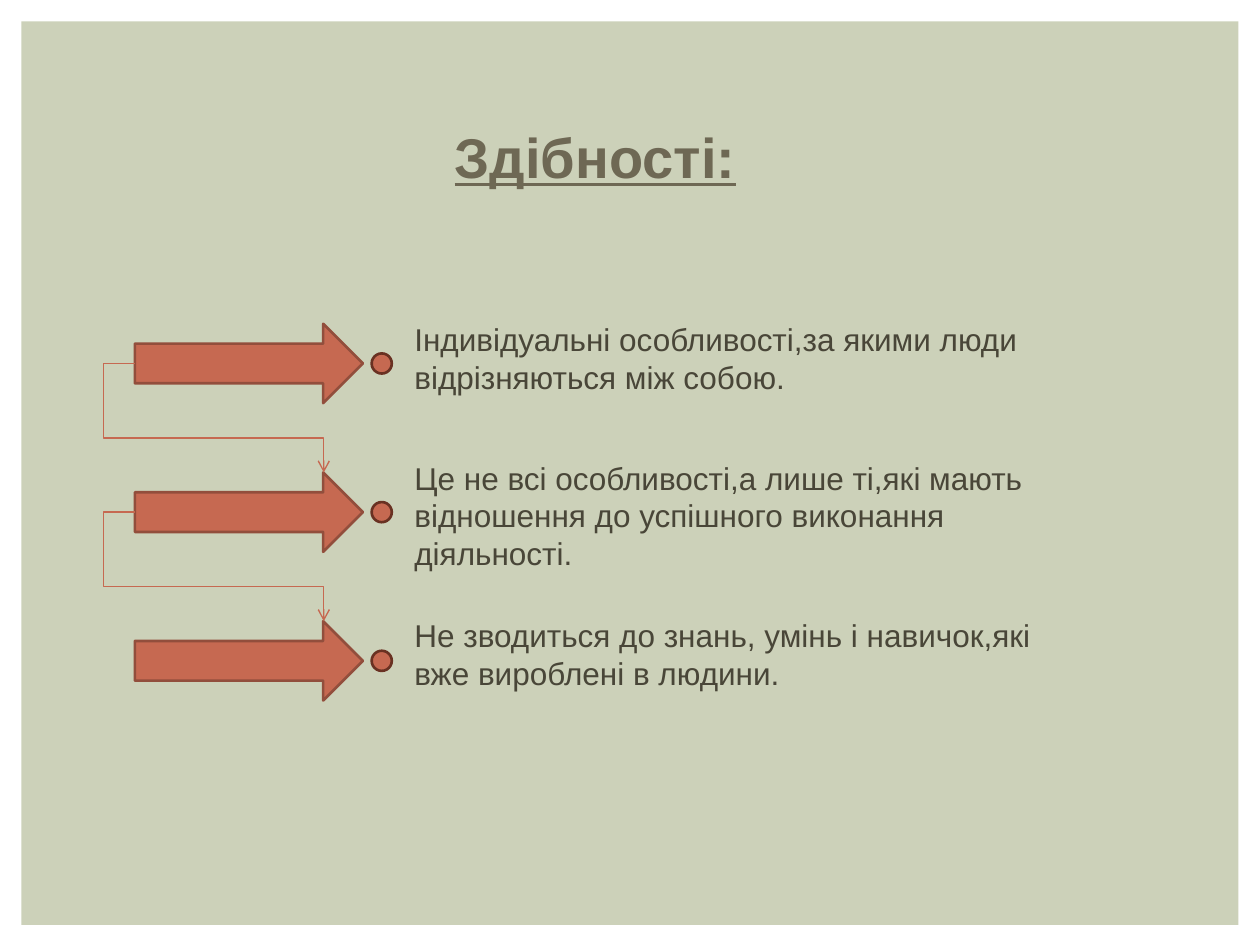
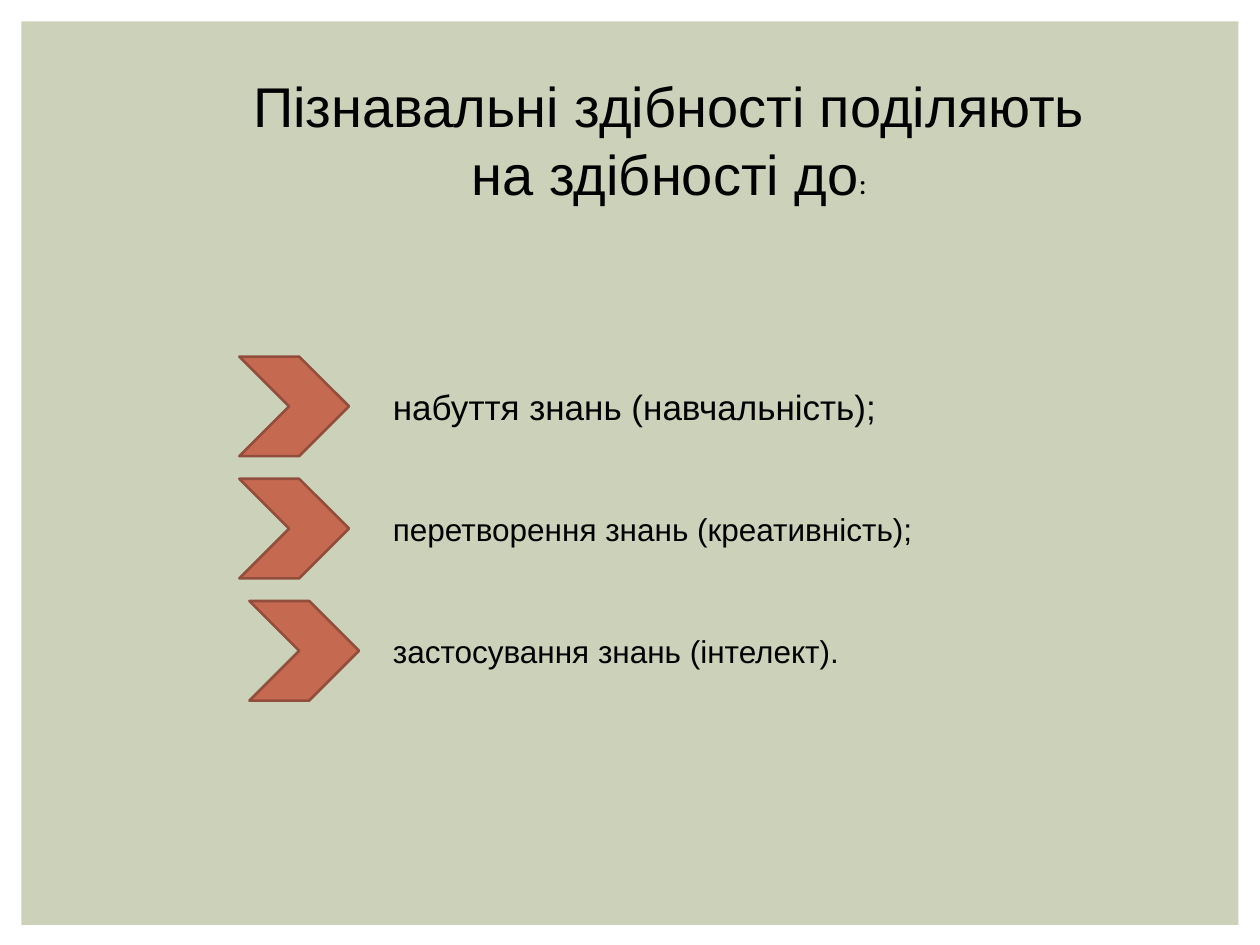
from lxml import etree
from pptx import Presentation
from pptx.dml.color import RGBColor
from pptx.enum.shapes import MSO_CONNECTOR, MSO_SHAPE as Shape
from pptx.enum.text import MSO_ANCHOR as Anchor, MSO_AUTO_SIZE, PP_ALIGN as Align
from pptx.oxml.ns import qn
from pptx.util import Inches, Pt

SAGE, CLAY = "CCD1B9", "C66951"
CLAY_EDGE, DOT_EDGE = "924E3C", "693122"
TITLE_BROWN, TEXT_BROWN, BLACK = "6E6854", "494638", "000000"


def add_figure(slide, kind, bounds, fill, edge=None):
    figure = slide.shapes.add_shape(kind, *map(Inches, bounds))
    figure.shadow.inherit = False
    figure.fill.solid()
    figure.fill.fore_color.rgb = RGBColor.from_string(fill)
    if edge:
        figure.line.color.rgb = RGBColor.from_string(edge)
        figure.line.width = Pt(1.5)
    else:
        figure.line.fill.background()
    return figure


def write(box, bounds, spans, anchor=Anchor.TOP, align=Align.LEFT):
    """Place a box and fill it with one paragraph of (text, colour, font formats) spans."""
    box.left, box.top, box.width, box.height = map(Inches, bounds)
    frame = box.text_frame
    frame.word_wrap = True
    frame.auto_size = MSO_AUTO_SIZE.NONE
    frame.vertical_anchor = anchor
    para = frame.paragraphs[0]
    para.alignment = align
    for text, colour, formats in spans:
        span = para.add_run()
        span.text = text
        span.font.color.rgb = RGBColor.from_string(colour)
        for name, value in ({"name": "Arial"} | formats).items():
            setattr(span.font, name, value)


deck = Presentation()
deck.slide_width, deck.slide_height = Inches(10), Inches(7.5)
layout = deck.slide_layouts[5]

# Slide 1: features of abilities
features = deck.slides.add_slide(layout)

# The sage panel belongs to the layout, behind everything on both slides
panel = add_figure(features, Shape.RECTANGLE, (0.17, 0.17, 9.66, 7.17), SAGE)
layout.shapes._spTree.insert(2, panel._element)

write(features.shapes.title, (2.56, 0.92, 4.33, 0.64),
      [("Здібності:", TITLE_BROWN, {"size": Pt(32), "bold": True, "underline": True})],
      align=Align.CENTER)

FIRST_ROW, ROW_STEP = 2.57, 1.18
ARROW_LEFT, ARROW_WIDTH, ARROW_HEIGHT = 1.07, 1.81, 0.63
DOT = 0.16
feature_texts = [
    ("Індивідуальні особливості,за якими люди відрізняються між собою.", 2.49, 6.06, 0.71),
    ("Це не всі особливості,а лише ті,які мають відношення до успішного "
     "виконання діяльності.", 3.59, 5.35, 1.01),
    ("Не зводиться до знань, умінь і навичок,які вже вироблені в людини.", 4.84, 5.12, 0.71),
]
arrows = []
for row, (text, text_top, width, height) in enumerate(feature_texts):
    top = FIRST_ROW + row * ROW_STEP
    arrows.append(add_figure(features, Shape.RIGHT_ARROW,
                             (ARROW_LEFT, top, ARROW_WIDTH, ARROW_HEIGHT), CLAY, CLAY_EDGE))
    add_figure(features, Shape.OVAL,
               (2.95, top + (ARROW_HEIGHT - DOT) / 2, DOT, DOT), CLAY, DOT_EDGE)
    box = features.shapes.add_textbox(0, 0, 0, 0)
    write(box, (3.19, text_top, width, height), [(text, TEXT_BROWN, {"size": Pt(18)})])

# Each link leaves an arrow's tail and drops onto the head of the next arrow
for upper, lower in zip(arrows, arrows[1:]):
    link = features.shapes.add_connector(MSO_CONNECTOR.ELBOW, 0, 0, 0, 0)
    link.begin_connect(upper, 1)
    link.end_connect(lower, 0)
    link.begin_x, link.begin_y = upper.left, upper.top + upper.height // 2
    link.end_x, link.end_y = lower.left + Inches(1.5), lower.top
    link.line.color.rgb = RGBColor.from_string(CLAY)
    link.line.width = Pt(0.79)
    properties = link._element.spPr
    etree.SubElement(properties.find(qn("a:ln")), qn("a:tailEnd"), type="arrow")
    etree.SubElement(properties, qn("a:effectLst"))
    geometry = properties.find(qn("a:prstGeom"))
    geometry.set("prst", "bentConnector4")
    guides = geometry.find(qn("a:avLst"))
    for name, share in (("adj1", -16700), ("adj2", 68200)):
        etree.SubElement(guides, qn("a:gd"), name=name, fmla=f"val {share}")

# Slide 2: kinds of cognitive abilities
kinds = deck.slides.add_slide(layout)
write(kinds.shapes.title, (1.69, 0.52, 7.24, 1.18),
      [("Пізнавальні здібності поділяють на здібності до", BLACK, {"size": Pt(32)}),
       (":", BLACK, {"size": Pt(18), "name": "Karla"})],
      align=Align.CENTER)

CHEVRON_TOP, CHEVRON_STEP = 2.83, 0.97
CHEVRON_WIDTH, CHEVRON_HEIGHT = 0.87, 0.79
kind_texts = [
    ("набуття знань (навчальність);", 20, 1.9),
    ("перетворення знань (креативність);", 18, 1.9),
    ("застосування знань (інтелект).", 18, 1.98),
]
for row, (text, size, left) in enumerate(kind_texts):
    top = CHEVRON_TOP + row * CHEVRON_STEP
    add_figure(kinds, Shape.CHEVRON, (left, top, CHEVRON_WIDTH, CHEVRON_HEIGHT), CLAY, CLAY_EDGE)
    box = kinds.shapes.add_textbox(0, 0, 0, 0)
    write(box, (3.02, top, 4.57, CHEVRON_HEIGHT),
          [(text, BLACK, {"size": Pt(size)})], anchor=Anchor.MIDDLE)

deck.save("out.pptx")
